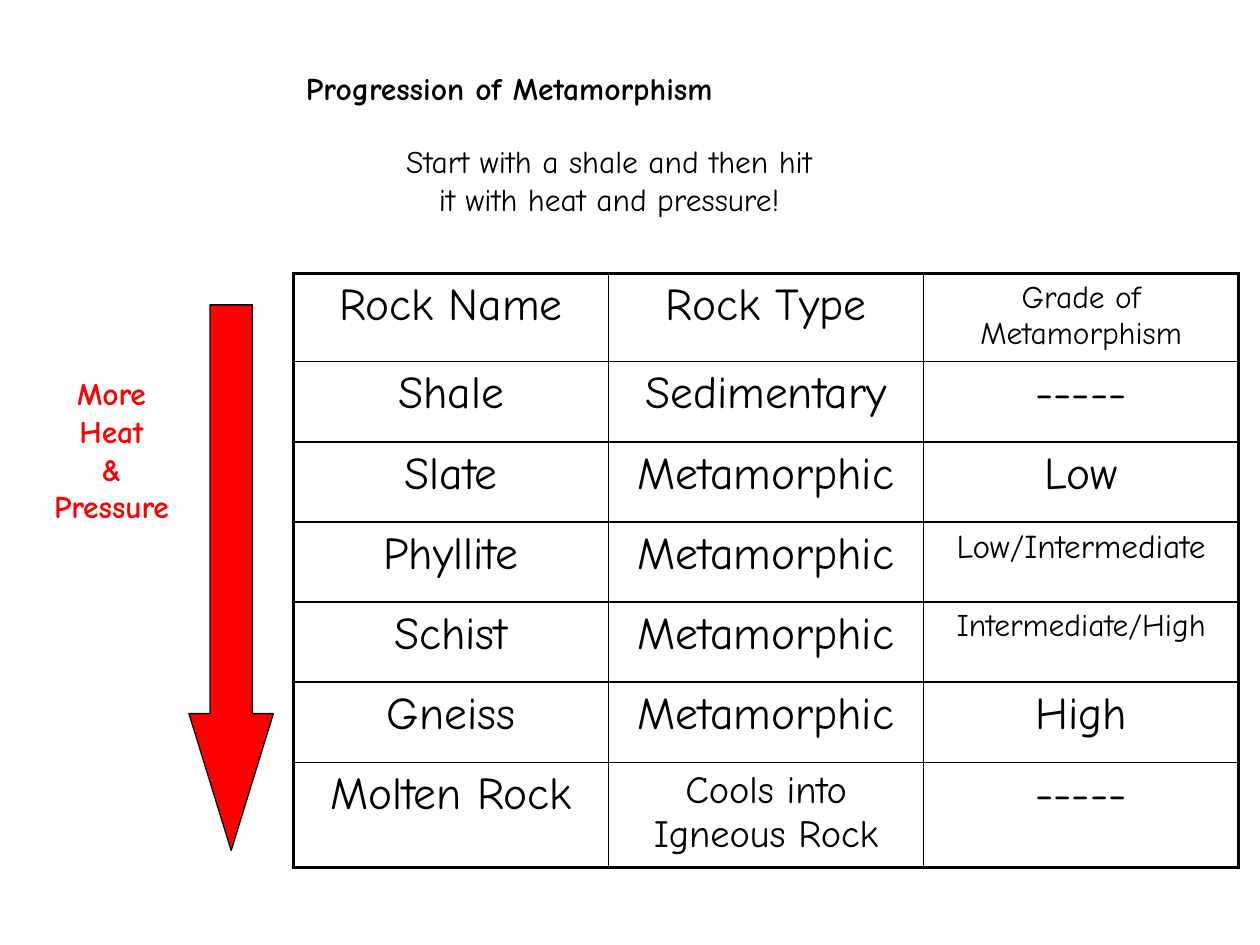
import lxml.etree
import pptx
import pptx.dml.color
import pptx.enum.shapes
import pptx.enum.text
import pptx.oxml.ns
import pptx.util

WIDTH, HEIGHT = 10, 7.5
FONT = "Comic Neue"
BLACK, RED = "000000", "FF0000"
THIN, THICK = 1, 2.25
BODY_SIZE = 26
HEADER_ROW, LAST_ROW = 0.7, 0.83
ROCKS = [
    ["Rock Name", "Rock Type", "Grade of Metamorphism"],
    ["Shale", "Sedimentary", "-----"],
    ["Slate", "Metamorphic", "Low"],
    ["Phyllite", "Metamorphic", "Low/Intermediate"],
    ["Schist", "Metamorphic", "Intermediate/High"],
    ["Gneiss", "Metamorphic", "High"],
    ["Molten Rock", "Cools into Igneous Rock", "-----"],
]
SPECIAL_SIZES = {
    "Grade of Metamorphism": 18,
    "Low/Intermediate": 19,
    "Intermediate/High": 18,
    "Cools into Igneous Rock": 22,
}


def color(hex_code):
    """Return the colour for a hex string."""
    return pptx.dml.color.RGBColor.from_string(hex_code)


def place(box):
    """Turn a box of inches into slide lengths."""
    return [pptx.util.Inches(length) for length in box]


def write(frame, text, size=18, ink=BLACK, bold=False, centered=True):
    """Fill a text frame with one paragraph for each line of text."""
    frame.word_wrap = True
    align = pptx.enum.text.PP_ALIGN
    for index, line in enumerate(text.split("\n")):
        para = frame.add_paragraph() if index else frame.paragraphs[0]
        para.alignment = align.CENTER if centered else align.LEFT
        span = para.add_run()
        span.text = line
        span.font.name = FONT
        span.font.size = pptx.util.Pt(size)
        span.font.bold = bold
        span.font.color.rgb = color(ink)


def add_text(page, box, text, **style):
    """Add a text box with formatted text."""
    write(page.shapes.add_textbox(*place(box)).text_frame, text, **style)


def border_cell(cell, widths):
    """Draw the left, right, top and bottom borders of a cell."""
    properties = cell._tc.get_or_add_tcPr()
    qn = pptx.oxml.ns.qn
    for index, (side, width) in enumerate(zip("LRTB", widths)):
        edge = lxml.etree.Element(qn(f"a:ln{side}"), w=str(pptx.util.Pt(width)))
        fill = lxml.etree.SubElement(edge, qn("a:solidFill"))
        lxml.etree.SubElement(fill, qn("a:srgbClr"), val=BLACK)
        properties.insert(index, edge)


def add_heading(page, box):
    """Add the title and the introduction below it."""
    left, top, width, height = box
    add_text(page, (left + 0.41, top, 4.94, 0.5),
             "Progression of Metamorphism", bold=True, centered=False)
    add_text(page, (left, top + 0.58, width, height - 0.58),
             "Start with a shale and then hit\nit with heat and pressure!")


def add_rock_table(page, box):
    """Add the bordered table of rocks."""
    rows, columns = len(ROCKS), len(ROCKS[0])
    table = page.shapes.add_table(rows, columns, *place(box)).table
    table.first_row = table.horz_banding = False
    middle_row = (box[3] - HEADER_ROW - LAST_ROW) / (rows - 2)
    heights = [HEADER_ROW] + [middle_row] * (rows - 2) + [LAST_ROW]
    for row, height in zip(table.rows, heights):
        row.height = pptx.util.Inches(height)
    for r, names in enumerate(ROCKS):
        for c, name in enumerate(names):
            cell = table.cell(r, c)
            cell.fill.background()
            write(cell.text_frame, name, size=SPECIAL_SIZES.get(name, BODY_SIZE))
            outer = (c == 0, c == columns - 1, r == 0, r == rows - 1)
            border_cell(cell, [THICK if edge else THIN for edge in outer])


def add_heat_scale(page, box):
    """Add the red arrow and its label."""
    left, top, width, height = box
    arrow_width = 0.67
    arrow = page.shapes.add_shape(
        pptx.enum.shapes.MSO_SHAPE.DOWN_ARROW,
        *place((left + width - arrow_width, top, arrow_width, height)))
    arrow.adjustments[0], arrow.adjustments[1] = 0.5, 1.62
    arrow.shadow.inherit = False
    arrow.fill.solid()
    arrow.fill.fore_color.rgb = color(RED)
    arrow.line.color.rgb = color(BLACK)
    arrow.line.width = pptx.util.Pt(0.75)
    add_text(page, (left, top + 0.5, 1.57, 1.7),
             "More\nHeat\n&\nPressure", ink=RED, bold=True)


def main():
    """Build and save the slide."""
    deck = pptx.Presentation()
    deck.slide_width, deck.slide_height = place((WIDTH, HEIGHT))
    page = deck.slides.add_slide(deck.slide_layouts[6])
    add_heading(page, (1.92, 0.5, 5.83, 1.48))
    add_rock_table(page, (2.33, 2.17, WIDTH * 0.75, 4.71))
    add_heat_scale(page, (0.1, 2.42, 2.07, 4.33))
    deck.save("out.pptx")


if __name__ == "__main__":
    main()
